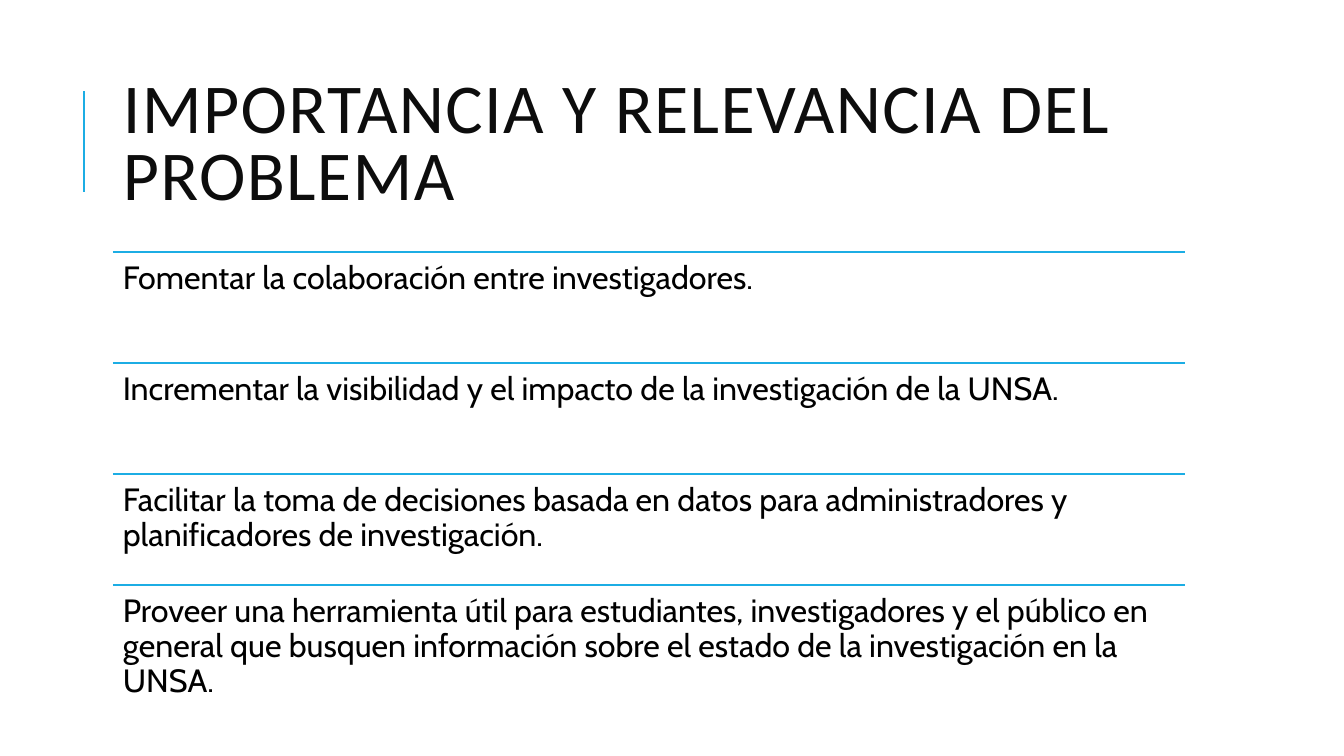
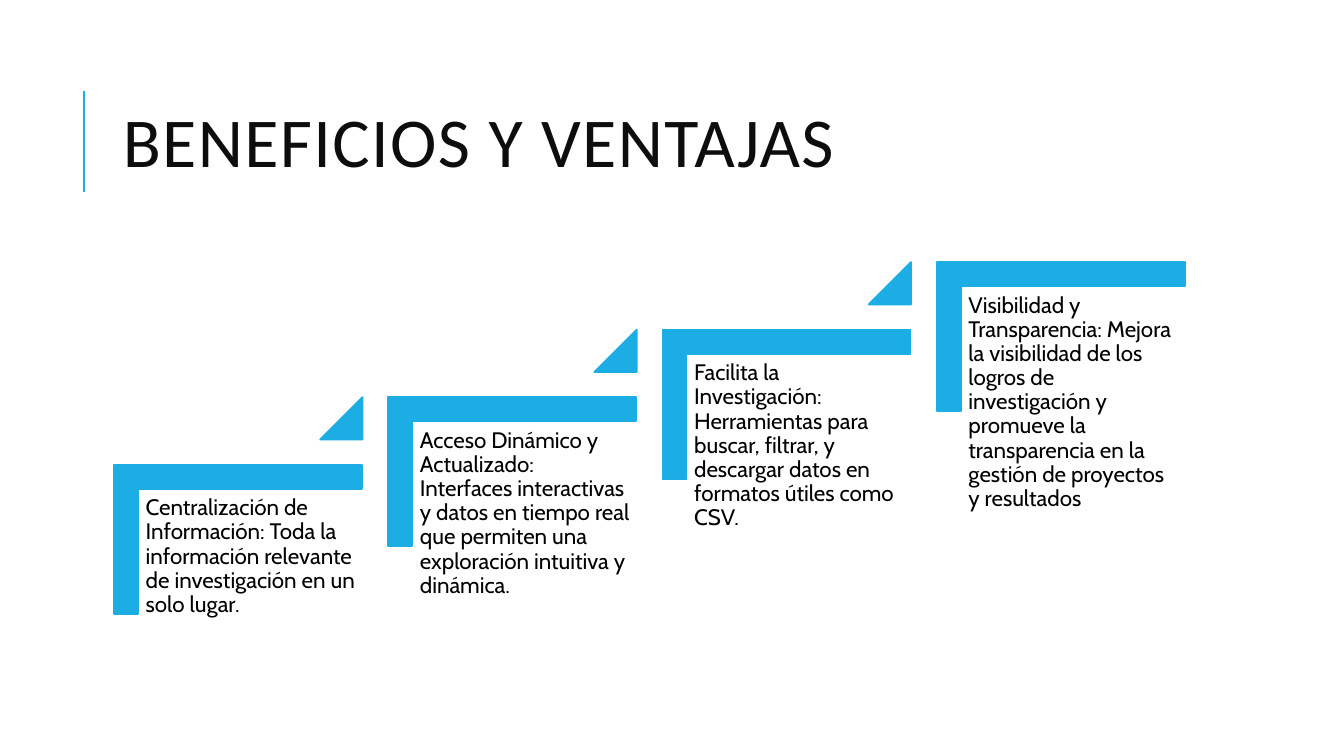
"""Builds two slides on the importance and the benefits of a research platform."""
import dataclasses

import lxml.etree
import pptx
import pptx.dml.color
import pptx.enum.shapes
import pptx.enum.text
import pptx.oxml.ns
import pptx.util

Inches = pptx.util.Inches
Pt = pptx.util.Pt
Shape = pptx.enum.shapes.MSO_SHAPE
Anchor = pptx.enum.text.MSO_ANCHOR


@dataclasses.dataclass(frozen=True)
class Theme:
    accent: str = "1CADE4"
    title_color: str = "0D0D0D"
    body_color: str = "000000"
    background: str = "FFFFFF"
    title_font: str = "Calibri"
    body_font: str = "Cabin"
    title_size: float = 50
    list_size: float = 23
    step_size: float = 16
    title_tracking: float = 1
    title_spacing: float = 0.8
    body_spacing: float = 0.9
    title_rule: float = 1.5
    thin_rule: float = 1.25
    left: float = 1.12
    width: float = 10.63


def rgb(color):
    return pptx.dml.color.RGBColor.from_string(color)


class Presenter:
    def __init__(self, theme):
        self.theme = theme
        self.deck = pptx.Presentation()
        self.deck.slide_width = Inches(13.33)
        self.deck.slide_height = Inches(7.5)
        self.slide = None

    def new_slide(self, title):
        theme = self.theme
        self.slide = self.deck.slides.add_slide(self.deck.slide_layouts[6])
        fill = self.slide.background.fill
        fill.solid()
        fill.fore_color.rgb = rgb(theme.background)
        self.rule(0.83, 1.9, 0.83, 0.9, theme.title_rule)
        box, span = self.text(title, theme.left, 0.64, theme.width, 1.64, theme.title_size,
                              theme.title_font, theme.title_color, theme.title_spacing)
        box.text_frame.vertical_anchor = Anchor.MIDDLE
        span._r.get_or_add_rPr().set("spc", str(round(theme.title_tracking * 100)))

    def rule(self, x1, y1, x2, y2, weight):
        line = self.slide.shapes.add_connector(
            pptx.enum.shapes.MSO_CONNECTOR.STRAIGHT, Inches(x1), Inches(y1), Inches(x2), Inches(y2))
        line.line.color.rgb = rgb(self.theme.accent)
        line.line.width = Pt(weight)
        lxml.etree.SubElement(line._element.spPr, pptx.oxml.ns.qn("a:effectLst"))

    def text(self, words, left, top, width, height, size, font, color, spacing):
        box = self.slide.shapes.add_textbox(
            Inches(left), Inches(top), Inches(width), Inches(height))
        box.text_frame.word_wrap = True
        para = box.text_frame.paragraphs[0]
        para.line_spacing = spacing
        span = para.add_run()
        span.text = words
        span.font.size = Pt(size)
        span.font.name = font
        span.font.color.rgb = rgb(color)
        return box, span

    def body(self, words, left, top, width, height, size, inset):
        theme = self.theme
        box, _ = self.text(words, left, top, width, height, size,
                           theme.body_font, theme.body_color, theme.body_spacing)
        frame = box.text_frame
        frame.margin_left = frame.margin_right = Inches(inset)
        frame.margin_top = frame.margin_bottom = Inches(inset)

    def shape(self, kind, left, top, width, height, adjustments, rotation=0):
        shape = self.slide.shapes.add_shape(
            kind, Inches(left), Inches(top), Inches(width), Inches(height))
        shape.shadow.inherit = False
        shape.rotation = rotation
        for index, value in enumerate(adjustments):
            shape.adjustments[index] = value
        shape.fill.solid()
        shape.fill.fore_color.rgb = rgb(self.theme.accent)
        shape.line.color.rgb = rgb(self.theme.accent)
        shape.line.width = Pt(self.theme.thin_rule)

    def ruled_list(self, items, top, row_height):
        theme = self.theme
        for index, words in enumerate(items):
            y = top + index * row_height
            self.rule(theme.left, y, theme.left + theme.width, y, theme.thin_rule)
            self.body(words, theme.left, y, theme.width, row_height, theme.list_size, 0.1)

    def staircase(self, steps, left, top, run, rise):
        for index, words in enumerate(steps):
            x = left + index * run
            y = top - index * rise
            self.shape(Shape.CORNER, x, y, 1.48, 2.46, [0.161, 0.161], 90)
            self.body(words, x - 0.245, y + 0.735, 2.22, 1.95, self.theme.step_size, 0.07)
            if index < len(steps) - 1:
                self.shape(Shape.ISOSCELES_TRIANGLE, x + 1.555, y - 0.18, 0.42, 0.42, [1])


def main():
    show = Presenter(Theme())

    show.new_slide("IMPORTANCIA Y RELEVANCIA DEL PROBLEMA")
    show.ruled_list([
        "Fomentar la colaboración entre investigadores.",
        "Incrementar la visibilidad y el impacto de la investigación de la UNSA.",
        "Facilitar la toma de decisiones basada en datos para administradores y "
        "planificadores de investigación.",
        "Proveer una herramienta útil para estudiantes, investigadores y el público en "
        "general que busquen información sobre el estado de la investigación en la UNSA.",
    ], top=2.5, row_height=1.1)

    show.new_slide("BENEFICIOS Y VENTAJAS")
    show.staircase([
        "Centralización de Información: Toda la información relevante de investigación "
        "en un solo lugar.",
        "Acceso Dinámico y Actualizado: Interfaces interactivas y datos en tiempo real "
        "que permiten una exploración intuitiva y dinámica.",
        "Facilita la Investigación: Herramientas para buscar, filtrar, y descargar datos "
        "en formatos útiles como CSV.",
        "Visibilidad y Transparencia: Mejora la visibilidad de los logros de investigación "
        "y promueve la transparencia en la gestión de proyectos y resultados",
    ], left=1.62, top=4.12, run=2.72, rise=0.67)

    show.deck.save("out.pptx")


if __name__ == "__main__":
    main()
